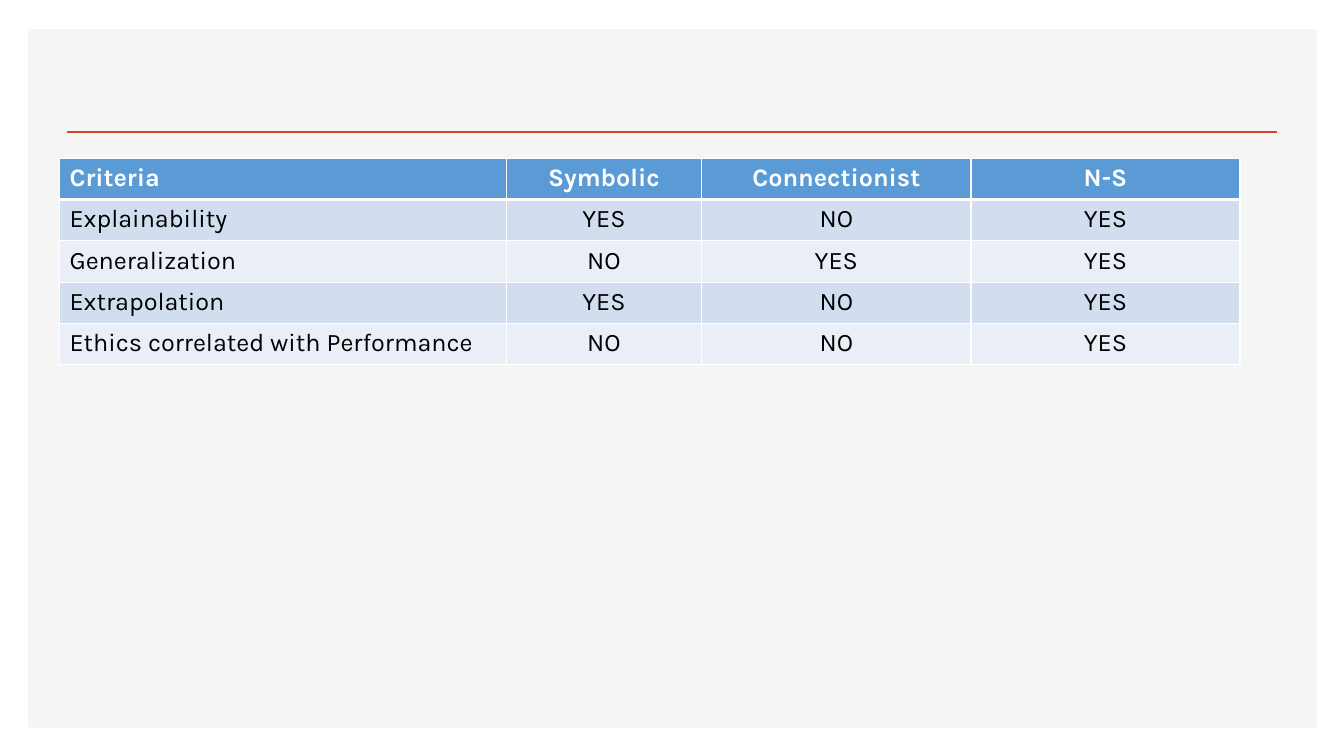
from lxml import etree
from pptx import Presentation
from pptx.dml.color import RGBColor
from pptx.enum import shapes, text
from pptx.oxml import ns
from pptx.util import Inches, Pt

WHITE = RGBColor(0xFF, 0xFF, 0xFF)
BLACK = RGBColor(0, 0, 0)
PALE = RGBColor(0xF5, 0xF5, 0xF5)
RED = RGBColor(0xD2, 0x47, 0x26)
BLUE = RGBColor(0x5B, 0x9B, 0xD5)
BANDS = [RGBColor(0xEA, 0xEF, 0xF7), RGBColor(0xD2, 0xDE, 0xEF)]

WIDTHS = [4.43, 1.94, 2.67, 2.67]
HEIGHT = 0.41
ROWS = [
    ["Criteria", "Symbolic", "Connectionist", "N-S"],
    ["Explainability", "YES", "NO", "YES"],
    ["Generalization", "NO", "YES", "YES"],
    ["Extrapolation", "YES", "NO", "YES"],
    ["Ethics correlated with Performance", "NO", "NO", "YES"],
]


def add_edge(cell, side, size):
    props = cell._tc.get_or_add_tcPr()
    edge = etree.SubElement(props, ns.qn("a:ln" + side), w=str(Pt(size)))
    fill = etree.SubElement(edge, ns.qn("a:solidFill"))
    etree.SubElement(fill, ns.qn("a:srgbClr"), val=str(WHITE))


deck = Presentation()
deck.slide_width = Inches(13.33)
deck.slide_height = Inches(7.5)
slide = deck.slides.add_slide(deck.slide_layouts[6])

# Grey panel
panel = slide.shapes.add_shape(shapes.MSO_SHAPE.RECTANGLE, Inches(0.28),
                               Inches(0.29), Inches(12.78), Inches(6.93))
panel.shadow.inherit = False
panel.fill.solid()
panel.fill.fore_color.rgb = PALE
panel.line.fill.background()

# Title rule
rule = slide.shapes.add_connector(shapes.MSO_CONNECTOR.STRAIGHT, Inches(0.66),
                                  Inches(1.31), Inches(12.67), Inches(1.31))
rule.line.color.rgb = RED
rule.line.width = Pt(2)
etree.SubElement(rule._element.spPr, ns.qn("a:effectLst"))

# Criteria table
frame = slide.shapes.add_table(len(ROWS), len(WIDTHS), Inches(0.59), Inches(1.57),
                               Inches(sum(WIDTHS)), Inches(HEIGHT * len(ROWS)))
table = frame.table
for col, width in zip(table.columns, WIDTHS):
    col.width = Inches(width)

for r, row in enumerate(ROWS):
    table.rows[r].height = Inches(HEIGHT)
    head = r == 0
    for c, label in enumerate(row):
        cell = table.cell(r, c)
        for side in "LRTB":
            thick = (head and side == "B") or (r == 1 and side == "T")
            add_edge(cell, side, 3 if thick else 1)
        cell.fill.solid()
        cell.fill.fore_color.rgb = BLUE if head else BANDS[r % 2]
        cell.text = label
        para = cell.text_frame.paragraphs[0]
        para.alignment = text.PP_ALIGN.CENTER if c else text.PP_ALIGN.LEFT
        para.font.name = "Karla"
        para.font.size = Pt(18)
        para.font.bold = head
        para.font.color.rgb = WHITE if head else BLACK

deck.save("out.pptx")
